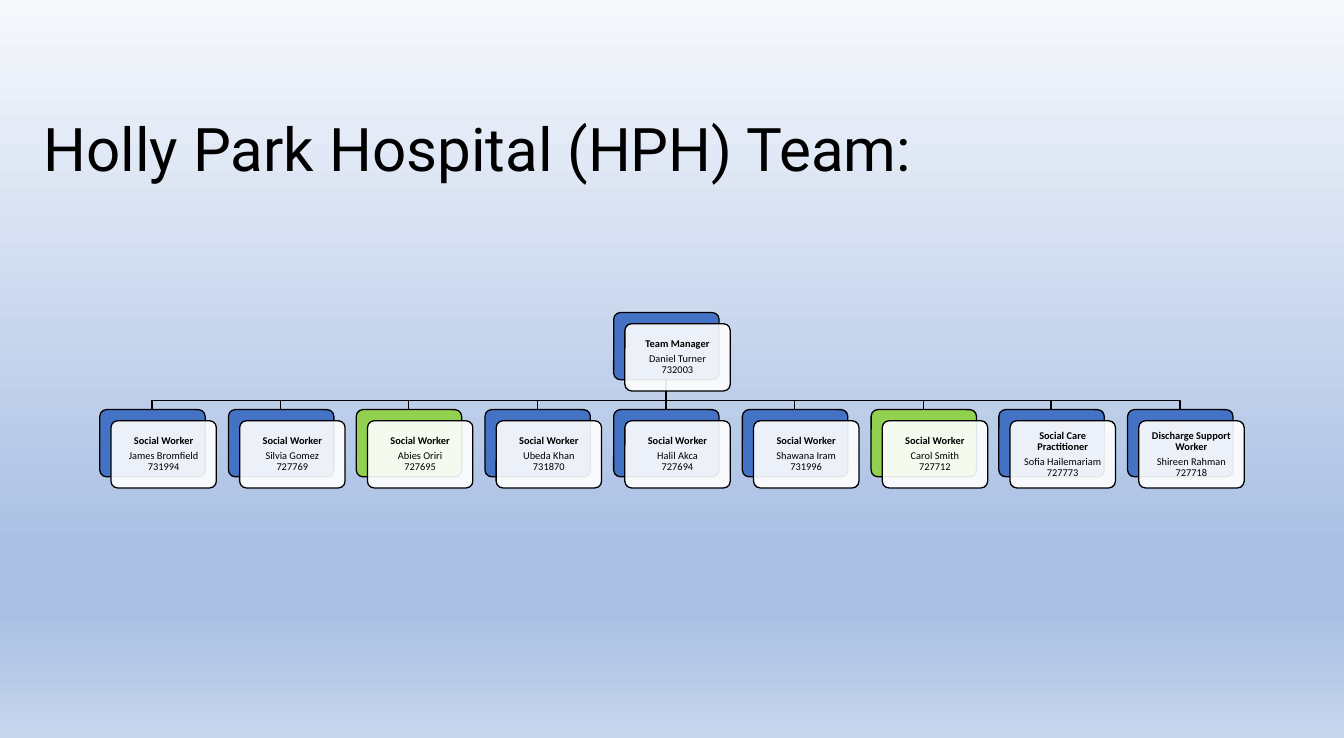
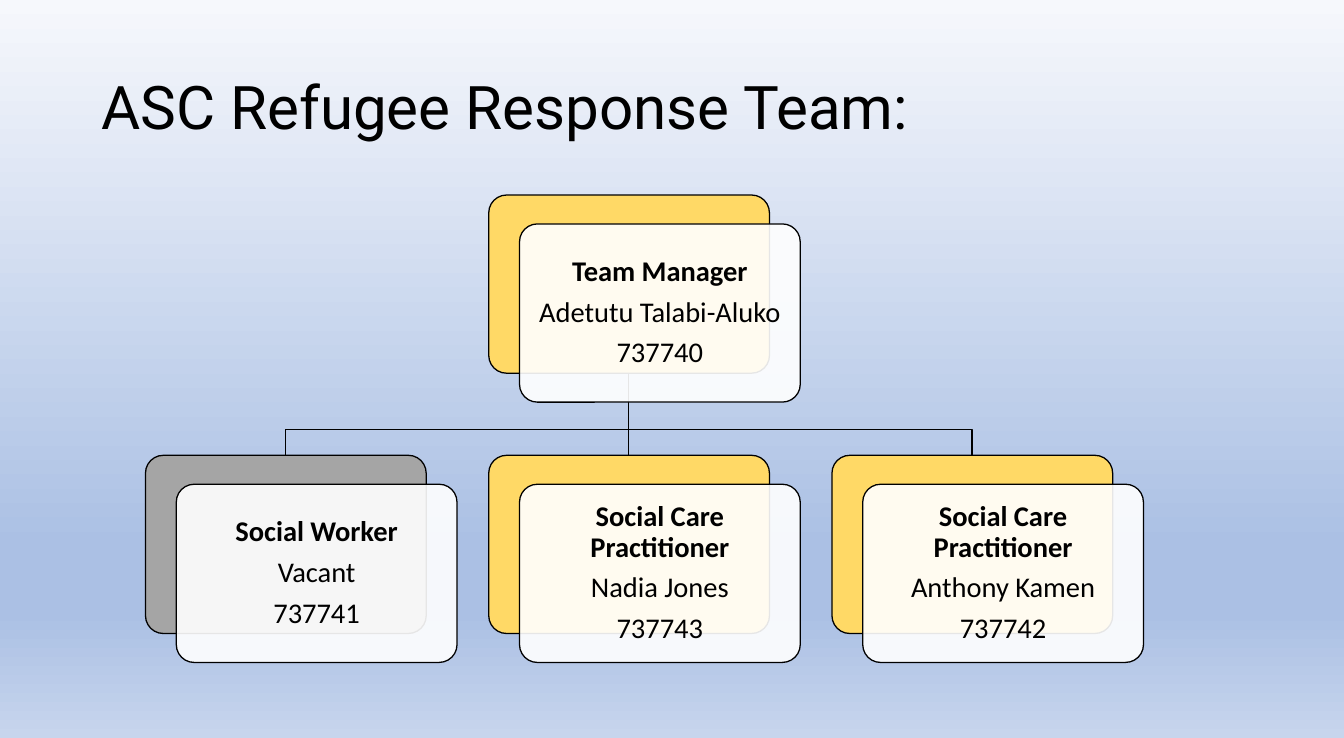
import copy

import lxml.etree
import pptx
import pptx.dml.color
import pptx.enum.shapes
import pptx.enum.text
import pptx.oxml.ns
import pptx.util

PX = 9144  # 100 px to the inch
HUES = {
    "black": "000000", "white": "FFFFFF", "blue": "4472C4",
    "green": "92D050", "gold": "FFD966", "grey": "A5A5A5",
}
SKY = [(0, "F6F8FC"), (0.74, "ABC0E4"), (0.83, "ABC0E4"), (1, "C7D5ED")]
ROUND = pptx.enum.shapes.MSO_SHAPE.ROUNDED_RECTANGLE
ALIGN = pptx.enum.text.PP_ALIGN
rgb = pptx.dml.color.RGBColor.from_string
qn = pptx.oxml.ns.qn

# Each member: role, lines below it, hue
TEAMS = [
    {
        "title": "Holly Park Hospital (HPH) Team:", "spot": (37, 87),
        "size": (113, 72), "shift": (12, 12), "inset": 3, "font": 8,
        "head": (658, 335), "row": 439, "ends": (107, 1209), "bend": 429,
        "lead": ("Team Manager", ["Daniel Turner\v732003"], "blue"),
        "staff": [
            ("Social Worker", ["James Bromfield\v731994"], "blue"),
            ("Social Worker", ["Silvia Gomez\v727769"], "blue"),
            ("Social Worker", ["Abies Oriri\v727695"], "green"),
            ("Social Worker", ["Ubeda Khan\v731870"], "blue"),
            ("Social Worker", ["Halil Akca\v727694"], "blue"),
            ("Social Worker", ["Shawana Iram\v731996"], "blue"),
            ("Social Worker", ["Carol Smith\v727712"], "green"),
            ("Social Care Practitioner", ["Sofia Hailemariam\v727773"], "blue"),
            ("Discharge Support Worker", ["Shireen Rahman\v727718"], "blue"),
        ],
    },
    {
        "title": "ASC Refugee Response Team:", "spot": (99, 42),
        "size": (301, 191), "shift": (33, 31), "inset": 9, "font": 22,
        "head": (524, 209), "row": 488, "ends": (156, 892), "bend": 460,
        "lead": ("Team Manager", ["Adetutu Talabi-Aluko", "737740"], "gold"),
        "staff": [
            ("Social Worker", ["Vacant", "737741"], "grey"),
            ("Social Care Practitioner", ["Nadia Jones", "737743"], "gold"),
            ("Social Care Practitioner", ["Anthony Kamen", "737742"], "gold"),
        ],
    },
]


def write(shape, lines, size, face="Calibri", align=ALIGN.CENTER, inset=None,
          bold=False, gap=0):
    """Fill a shape with text; bold applies to the first line."""
    frame = shape.text_frame
    frame.word_wrap = True
    frame.vertical_anchor = pptx.enum.text.MSO_ANCHOR.MIDDLE
    if inset is not None:
        frame.margin_left = frame.margin_right = inset * PX
        frame.margin_top = frame.margin_bottom = inset * PX
    for i, line in enumerate(lines):
        para = frame.add_paragraph() if i else frame.paragraphs[0]
        para.text = line
        para.alignment = align
        para.line_spacing = 0.9
        para.space_after = pptx.util.Pt(gap)
        for run in para.runs:
            run.font.name = face
            run.font.size = pptx.util.Pt(size)
            run.font.bold = bold and i == 0
            run.font.color.rgb = rgb(HUES["black"])
    # Line breaks take the format of the text beside them
    for mark in shape.element.iter(qn("a:br")):
        mark.append(copy.deepcopy(mark.getprevious().find(qn("a:rPr"))))


def plate(slide, x, y, size, hue):
    """Draw one rounded box with a black edge."""
    box = slide.shapes.add_shape(ROUND, x * PX, y * PX, size[0] * PX, size[1] * PX)
    box.adjustments[0] = 0.1
    box.shadow.inherit = False
    box.fill.solid()
    box.fill.fore_color.rgb = rgb(HUES[hue])
    box.line.color.rgb = rgb(HUES["black"])
    box.line.width = pptx.util.Pt(1)
    return box


deck = pptx.Presentation()
deck.slide_width = 1441 * PX
deck.slide_height = 791 * PX

# Shared background on the master
fill = deck.slide_master.background.fill
fill.gradient()
fill.gradient_angle = 270
stops = next(deck.slide_master.element.iter(qn("a:gsLst")))
for stop in list(stops):
    stops.append(copy.deepcopy(stop))
for stop, (place, hue) in zip(fill.gradient_stops, SKY):
    stop.color.rgb = rgb(hue)
    stop.position = place

for team in TEAMS:
    slide = deck.slides.add_slide(deck.slide_layouts[6])
    wide, high = team["size"]
    left, top = team["head"]

    # Title
    x, y = team["spot"]
    title = slide.shapes.add_textbox(x * PX, y * PX, 1243 * PX, 153 * PX)
    write(title, [team["title"]], 46.4, face="Roboto", align=ALIGN.LEFT)

    # Even spread of the staff row
    first, last = team["ends"]
    step = (last - first) / (len(team["staff"]) - 1)
    spots = [round(first + i * step) for i in range(len(team["staff"]))]

    # Branches from the lead to each member
    stem = left + wide // 2
    for spot in spots:
        foot = spot + wide // 2
        path = [(stem, team["bend"]), (foot, team["bend"]), (foot, team["row"])]
        pen = slide.shapes.build_freeform(stem, top + high, scale=PX)
        pen.add_line_segments(path, close=False)
        branch = pen.convert_to_shape()
        branch.shadow.inherit = False
        branch.fill.background()
        branch.line.color.rgb = rgb(HUES["black"])
        branch.line.width = pptx.util.Pt(1)

    # Cards: a coloured plate behind, a sheer white one in front
    cards = [(left, top, team["lead"])]
    cards += [(spot, team["row"], who) for spot, who in zip(spots, team["staff"])]
    for x, y, (role, lines, hue) in cards:
        plate(slide, x, y, team["size"], hue)
        card = plate(slide, x + team["shift"][0], y + team["shift"][1],
                     team["size"], "white")
        tint = next(card.element.iter(qn("a:srgbClr")))
        lxml.etree.SubElement(tint, qn("a:alpha"), val="90000")
        write(card, [role] + lines, team["font"], inset=team["inset"],
              bold=True, gap=round(team["font"] * 0.35, 1))

deck.save("out.pptx")
